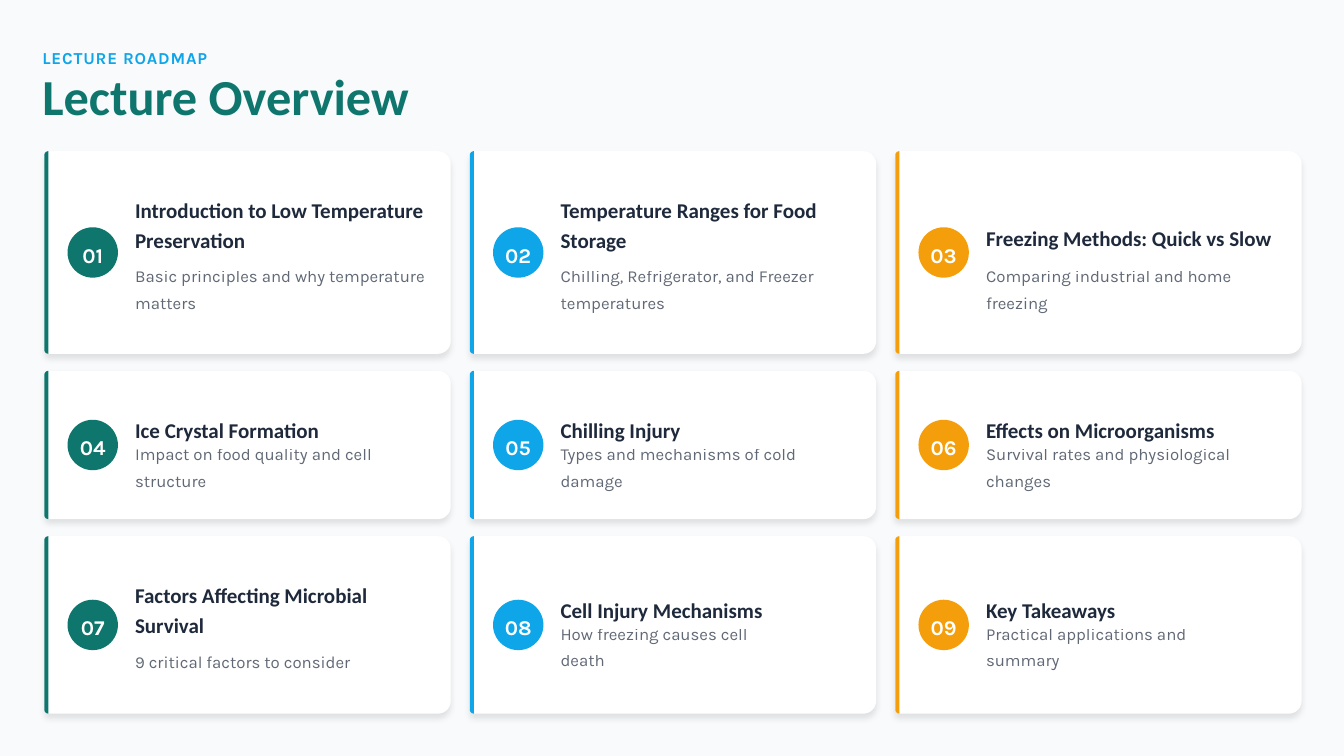
from dataclasses import dataclass
from math import cos, radians, sin

from lxml.etree import SubElement
from pptx import Presentation
from pptx.dml.color import RGBColor
from pptx.enum.shapes import MSO_SHAPE
from pptx.enum.text import MSO_ANCHOR, MSO_AUTO_SIZE, PP_ALIGN
from pptx.oxml.ns import qn
from pptx.shapes.autoshape import Shape
from pptx.slide import Slide
from pptx.text.text import TextFrame
from pptx.util import Inches, Pt

TEAL, BLUE, AMBER = "0F766E", "0EA5E9", "F59E0B"
INK, WHITE, PAPER = "1E293B", "FFFFFF", "F8FAFC"


@dataclass(frozen=True)
class Style:
    font: str
    size: int
    color: str
    leading: float
    bold: bool = True
    align: PP_ALIGN = PP_ALIGN.LEFT
    alpha: int = 100
    spacing: float = 0


@dataclass(frozen=True)
class Topic:
    head: str
    note: str
    head_lines: int = 1
    note_lines: int = 1
    width: float = 3.03


@dataclass(frozen=True)
class Row:
    height: float
    topics: tuple[Topic, ...]


LABEL = Style("Karla", 12, BLUE, 1.3, spacing=0.6)
TITLE = Style("Calibri", 36, TEAL, 0.8)
BADGE = Style("Karla", 15, WHITE, 1.2, align=PP_ALIGN.CENTER)
HEAD = Style("Calibri", 15, INK, 1.2)
NOTE = Style("Karla", 12, INK, 1.3, bold=False, alpha=70)

ROWS = (
    Row(2.01, (
        Topic("Introduction to Low Temperature Preservation",
              "Basic principles and why temperature matters", 2, 2),
        Topic("Temperature Ranges for Food Storage",
              "Chilling, Refrigerator, and Freezer temperatures", 2, 2),
        Topic("Freezing Methods: Quick vs Slow",
              "Comparing industrial and home freezing", 2),
    )),
    Row(1.47, (
        Topic("Ice Crystal Formation",
              "Impact on food quality and cell structure", width=3.02),
        Topic("Chilling Injury",
              "Types and mechanisms of cold damage", width=2.95),
        Topic("Effects on Microorganisms",
              "Survival rates and physiological changes", width=3),
    )),
    Row(1.76, (
        Topic("Factors Affecting Microbial Survival",
              "9 critical factors to consider", 2),
        Topic("Cell Injury Mechanisms",
              "How freezing causes cell death", width=2.32),
        Topic("Key Takeaways",
              "Practical applications and summary", width=2.66),
    )),
)
ACCENTS = (TEAL, BLUE, AMBER)
LEFT, TOP = 0.44, 1.5
CARD_W, STEP, ROW_GAP = 4.03, 4.22, 0.17
BAR_W, CORNER, BADGE_D = 0.04, 0.125, 0.5
HEAD_H, NOTE_H, TEXT_GAP = 0.29, 0.25, 0.09


def rgb(color: str) -> RGBColor:
    return RGBColor.from_string(color)


def place(shape: Shape, x: float, y: float, w: float, h: float) -> None:
    shape.left, shape.top = Inches(x), Inches(y)
    shape.width, shape.height = Inches(w), Inches(h)


def write(frame: TextFrame, text: str, style: Style, wrap: bool = True) -> None:
    frame.margin_left = frame.margin_right = 0
    frame.margin_top = frame.margin_bottom = 0
    frame.word_wrap = wrap
    frame.auto_size = MSO_AUTO_SIZE.NONE
    frame.vertical_anchor = MSO_ANCHOR.MIDDLE
    frame.text = text
    para = frame.paragraphs[0]
    para.alignment, para.line_spacing = style.align, style.leading
    run = para.runs[0]
    font = run.font
    font.name, font.size, font.bold = style.font, Pt(style.size), style.bold
    font.color.rgb = rgb(style.color)
    props = font._element
    if style.spacing:
        props.set("spc", str(round(style.spacing * 100)))
    if style.alpha < 100:
        tint = props.find(f".//{qn('a:srgbClr')}")
        SubElement(tint, qn("a:alpha"), val=str(style.alpha * 1000))


def add_text(slide: Slide, text: str, style: Style,
             x: float, y: float, w: float, h: float) -> None:
    box = slide.shapes.add_textbox(Inches(x), Inches(y), Inches(w), Inches(h))
    write(box.text_frame, text, style)


def paint(shape: Shape, color: str) -> None:
    shape.fill.solid()
    shape.fill.fore_color.rgb = rgb(color)
    shape.line.fill.background()
    shape.shadow.inherit = False


def add_panel(slide: Slide, x: float, y: float, w: float, h: float,
              right: float, color: str) -> Shape:
    """Draw a panel with small left corners and right corners of a given radius."""
    corners = (
        (x + w - right, y + right, right, 270),
        (x + w - right, y + h - right, right, 0),
        (x + BAR_W, y + h - BAR_W, BAR_W, 90),
        (x + BAR_W, y + BAR_W, BAR_W, 180),
    )
    points = [
        (Inches(cx + r * cos(radians(start + turn))),
         Inches(cy + r * sin(radians(start + turn))))
        for cx, cy, r, start in corners
        for turn in (range(0, 91, 10) if r else (0,))
    ]
    path_maker = slide.shapes.build_freeform(*points[0])
    path_maker.add_line_segments(points[1:], close=True)
    panel = path_maker.convert_to_shape()
    paint(panel, color)
    return panel


def add_shade(shape: Shape) -> None:
    effects = shape.element.spPr.find(qn("a:effectLst"))
    shade = SubElement(effects, qn("a:outerShdw"), blurRad=str(Pt(4.5)),
                       dist=str(Pt(3)), dir="5400000", algn="ctr", rotWithShape="0")
    tint = SubElement(shade, qn("a:srgbClr"), val="000000")
    SubElement(tint, qn("a:alpha"), val="10000")


def add_card(slide: Slide, topic: Topic, number: int, accent: str,
             x: float, y: float, h: float) -> None:
    add_shade(add_panel(slide, x, y, CARD_W, h, CORNER, WHITE))
    add_panel(slide, x, y, BAR_W, h, 0, accent)
    middle = y + h / 2
    badge = slide.shapes.add_shape(
        MSO_SHAPE.OVAL, Inches(x + 0.23), Inches(middle - BADGE_D / 2),
        Inches(BADGE_D), Inches(BADGE_D))
    paint(badge, accent)
    write(badge.text_frame, f"{number:02}", BADGE, wrap=False)

    head_h = HEAD_H * topic.head_lines
    note_h = NOTE_H * topic.note_lines
    head_y = middle - (head_h + TEXT_GAP + note_h) / 2
    text_x = x + 0.9
    add_text(slide, topic.head, HEAD, text_x, head_y, topic.width, head_h)
    add_text(slide, topic.note, NOTE, text_x, head_y + head_h + TEXT_GAP,
             topic.width - 0.02, note_h)


def main() -> None:
    deck = Presentation()
    deck.slide_width, deck.slide_height = Inches(13.33), Inches(7.5)
    slide = deck.slides.add_slide(deck.slide_layouts[5])
    slide.background.fill.solid()
    slide.background.fill.fore_color.rgb = rgb(PAPER)

    add_text(slide, "LECTURE ROADMAP", LABEL, 0.42, 0.42, 12.58, 0.25)
    title = slide.shapes.title
    place(title, 0.42, 0.75, 12.75, 0.5)
    write(title.text_frame, "Lecture Overview", TITLE)

    y, number = TOP, 1
    for row in ROWS:
        for col, (topic, accent) in enumerate(zip(row.topics, ACCENTS)):
            add_card(slide, topic, number, accent, LEFT + col * STEP, y, row.height)
            number += 1
        y += row.height + ROW_GAP
    deck.save("out.pptx")


if __name__ == "__main__":
    main()
